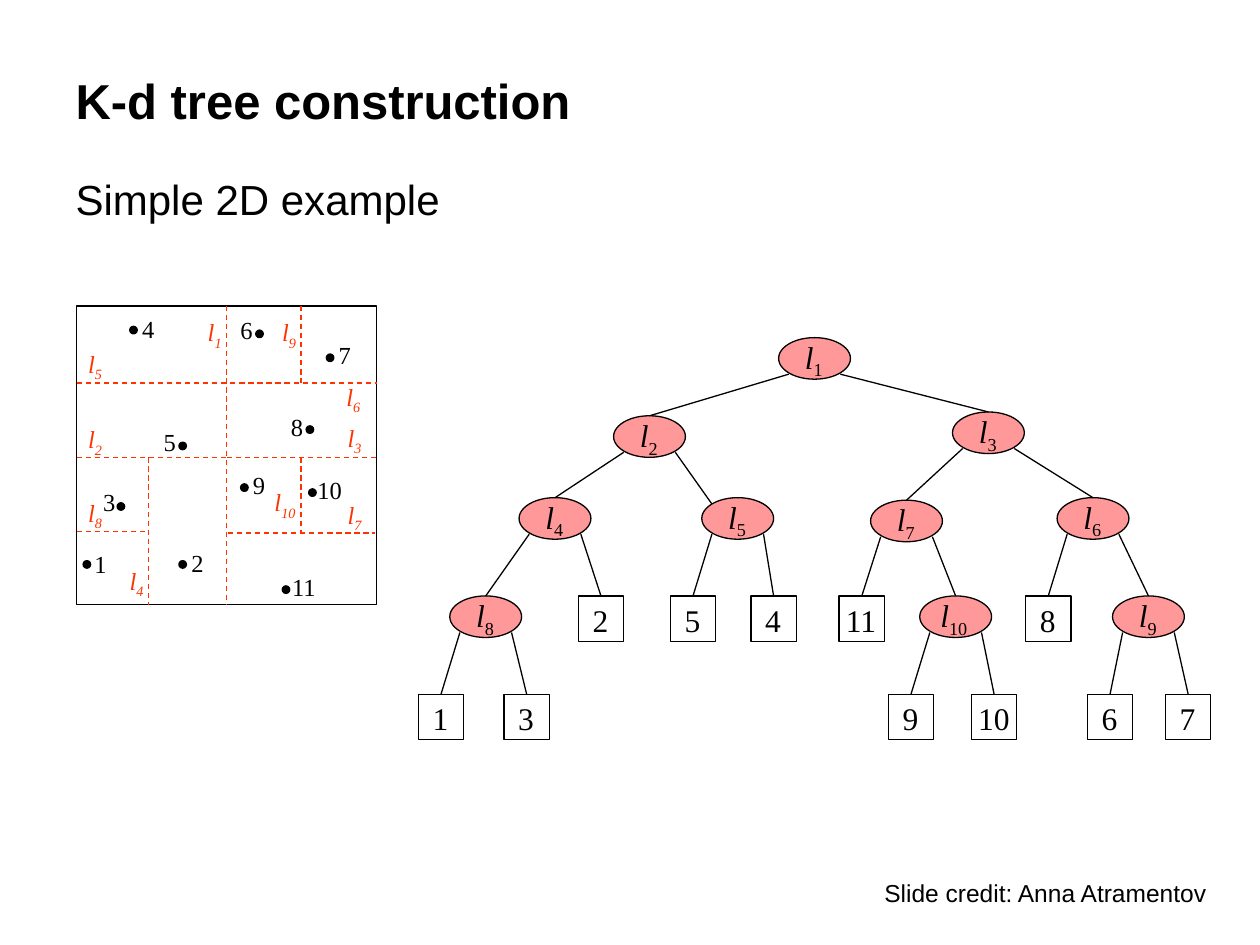
import lxml.etree
import pptx
import pptx.dml.color
import pptx.enum.dml
import pptx.enum.shapes
import pptx.enum.text
import pptx.oxml.ns
import pptx.util

EMU_PER_PX = 9144  # 100 px to the inch
BLACK, ORANGE, PINK = "000000", "FF3300", "FF9999"
SANS, SERIF = "Arial", "Times New Roman"
OVAL = pptx.enum.shapes.MSO_SHAPE.OVAL
RECTANGLE = pptx.enum.shapes.MSO_SHAPE.RECTANGLE
NODE_WIDTH, NODE_HEIGHT, LEAF_SIDE, DOT_SIDE = 57, 33, 36, 6

# Map: dashed splitting lines, from and to
SPLITS = [
    ((61, 363), (181, 363)), ((180, 363), (299, 363)),
    ((61, 304), (299, 304)), ((239, 243), (239, 304)),
    ((118, 363), (118, 480)), ((181, 423), (298, 423)),
    ((239, 363), (239, 424)), ((61, 422), (118, 422)),
]
# Map: number -> corner of the dot, corner of its label
POINTS = {
    "1": ((66, 445), (65, 431)), "2": ((142, 445), (142, 430)),
    "3": ((93, 399), (72, 382)), "4": ((103, 259), (103, 244)),
    "5": ((142, 351), (120, 334)), "6": ((203, 262), (181, 245)),
    "7": ((259, 281), (259, 265)), "8": ((243, 338), (221, 322)),
    "9": ((245, 388), (191, 368)), "10": ((245, 388), (242, 372)),
    "11": ((224, 465), (222, 449)),
}
POINTS["9"] = ((191, 384), (191, 368))
# Map: index of the splitting line -> corner of its label
SPLIT_LABELS = {
    "1": (155, 247), "2": (60, 332), "3": (266, 331), "4": (93, 444),
    "5": (60, 272), "6": (265, 298), "7": (266, 392), "8": (60, 390),
    "9": (214, 247), "10": (208, 382),
}
# Tree: index of the inner node -> its corner
NODES = {
    "1": (618, 268), "2": (487, 330), "3": (756, 327), "4": (412, 395),
    "5": (557, 395), "6": (839, 395), "7": (691, 397), "8": (357, 473),
    "9": (883, 473), "10": (730, 473),
}
# Tree: number in the leaf -> its corner
LEAVES = {
    "1": (332, 551), "2": (459, 473), "3": (400, 551), "4": (596, 473),
    "5": (532, 473), "6": (863, 551), "7": (925, 551), "8": (814, 473),
    "9": (705, 551), "10": (771, 551), "11": (666, 473),
}
# Tree: inner node -> left and right child ("l" marks an inner node)
CHILDREN = {
    "1": ("l2", "l3"), "2": ("l4", "l5"), "3": ("l7", "l6"),
    "4": ("l8", "2"), "5": ("5", "4"), "6": ("8", "l9"),
    "7": ("11", "l10"), "8": ("1", "3"), "9": ("6", "7"),
    "10": ("9", "10"),
}


def px(length):
    return pptx.util.Emu(round(length * EMU_PER_PX))


def rgb(color):
    return pptx.dml.color.RGBColor.from_string(color)


def write(paragraph, text, size=14, font=SERIF, color=BLACK, bold=False,
          italic=False, subscript=False):
    run = paragraph.add_run()
    run.text = text
    run.font.size = pptx.util.Pt(size)
    run.font.name = font
    run.font.color.rgb = rgb(color)
    run.font.bold = bold
    run.font.italic = italic
    if subscript:
        run.font._element.set("baseline", "-25000")


class SlidePainter:
    """Holds the line style and the slide that is being drawn."""

    line_width = pptx.util.Pt(0.75)

    def __init__(self, slide):
        self.slide = slide

    def placeholder(self, index, text, left, top, width, height, anchor, **style):
        holder = self.slide.placeholders[index]
        holder.left, holder.top = px(left), px(top)
        holder.width, holder.height = px(width), px(height)
        frame = holder.text_frame
        frame.auto_size = pptx.enum.text.MSO_AUTO_SIZE.NONE
        frame.vertical_anchor = anchor
        paragraph = frame.paragraphs[0]
        paragraph.alignment = pptx.enum.text.PP_ALIGN.LEFT
        paragraph.space_before = pptx.util.Pt(0)
        properties = paragraph._p.get_or_add_pPr()
        properties.set("marL", "0")
        properties.set("indent", "0")
        lxml.etree.SubElement(properties, pptx.oxml.ns.qn("a:buNone"))
        write(paragraph, text, font=SANS, **style)

    def label(self, text, left, top, width, height=33, **style):
        box = self.slide.shapes.add_textbox(px(left), px(top), px(width), px(height))
        box.text_frame.word_wrap = False
        paragraph = box.text_frame.paragraphs[0]
        write(paragraph, text, **style)
        return paragraph

    def indexed_label(self, index, left, top, width, height=33,
                      italic_index=False, **style):
        paragraph = self.label("l", left, top, width, height, italic=True, **style)
        write(paragraph, index, italic=italic_index, subscript=True, **style)

    def shape(self, kind, left, top, width, height, fill=None):
        shape = self.slide.shapes.add_shape(kind, px(left), px(top), px(width), px(height))
        shape.shadow.inherit = False
        if fill:
            shape.fill.solid()
            shape.fill.fore_color.rgb = rgb(fill)
        else:
            shape.fill.background()
        shape.line.color.rgb = rgb(BLACK)
        shape.line.width = self.line_width
        return shape

    def line(self, start, end, color=BLACK, dashed=False):
        connector = self.slide.shapes.add_connector(
            pptx.enum.shapes.MSO_CONNECTOR.STRAIGHT, *map(px, (*start, *end)))
        connector.line.color.rgb = rgb(color)
        connector.line.width = self.line_width
        if dashed:
            connector.line.dash_style = pptx.enum.dml.MSO_LINE.DASH
        lxml.etree.SubElement(connector._element.spPr, pptx.oxml.ns.qn("a:effectLst"))
        return connector


def draw_map(painter):
    border = painter.shape(RECTANGLE, 61, 243, 238, 237)
    for start, end in SPLITS:
        painter.line(start, end, ORANGE, dashed=True)
    first_split = painter.line((181, 243), (181, 480), ORANGE, dashed=True)
    first_split.begin_connect(border, 0)
    first_split.end_connect(border, 2)

    for number, (dot, corner) in POINTS.items():
        painter.shape(OVAL, *dot, DOT_SIDE, DOT_SIDE, fill=BLACK)
        painter.label(number, *corner, 20 + 10 * len(number))
    for index, corner in SPLIT_LABELS.items():
        painter.indexed_label(index, *corner, 26 + 6 * len(index),
                              italic_index=True, color=ORANGE)


def draw_tree(painter):
    boxes = {}
    # Inner nodes
    for index, (left, top) in NODES.items():
        boxes["l" + index] = painter.shape(OVAL, left, top, NODE_WIDTH, NODE_HEIGHT, fill=PINK)
        width = 26 + 9 * len(index)
        painter.indexed_label(index, left + (NODE_WIDTH - width) / 2, top - 5,
                              width, 40, size=18)
    # Leaves
    for number, (left, top) in LEAVES.items():
        boxes[number] = painter.shape(RECTANGLE, left, top, LEAF_SIDE, LEAF_SIDE)
        width = 21 + 12 * len(number)
        painter.label(number, left + (LEAF_SIDE - width) / 2, top - 1, width, 40, size=18)
    # Branches leave a node at its lower left and lower right
    for parent, children in CHILDREN.items():
        left, top = NODES[parent]
        for child, offset in zip(children, (8, 49)):
            start = (left + offset, top + 29)
            if child == "l5":  # this branch meets the upper left of its node
                painter.line(start, (NODES["5"][0] + 8, NODES["5"][1] + 5))
            else:
                painter.line(start, start).end_connect(boxes[child], 0)


def main():
    deck = pptx.Presentation()
    deck.slide_width, deck.slide_height = px(1000), px(750)
    painter = SlidePainter(deck.slides.add_slide(deck.slide_layouts[1]))
    anchors = pptx.enum.text.MSO_ANCHOR

    # Title, subtitle and credit
    painter.placeholder(0, "K-d tree construction", 50, 33, 892, 92,
                        anchors.MIDDLE, size=28, bold=True)
    painter.placeholder(1, "Simple 2D example", 50, 133, 310, 50, anchors.TOP, size=24)
    painter.label("Slide credit: Anna Atramentov", 692, 692, 277, font=SANS)

    draw_map(painter)
    draw_tree(painter)
    deck.save("out.pptx")


if __name__ == "__main__":
    main()
